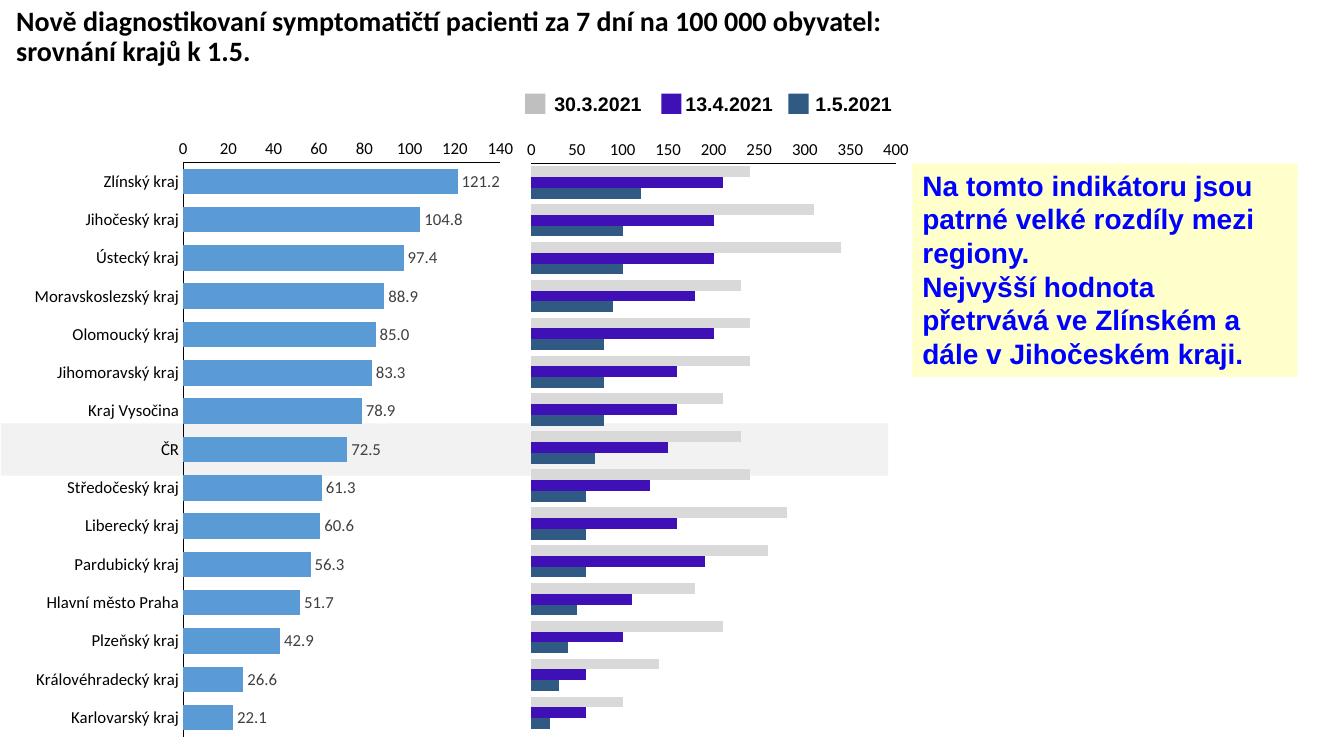
import dataclasses

import lxml.etree
import pptx
import pptx.chart.data
import pptx.dml.color
import pptx.enum.chart
import pptx.enum.shapes
import pptx.enum.text
import pptx.oxml.ns
import pptx.util

Inches = pptx.util.Inches
Pt = pptx.util.Pt


@dataclasses.dataclass(frozen=True)
class Theme:
    heading_font: str = "Calibri"
    text_font: str = "Arial"
    title_size: int = 20
    note_size: int = 20
    legend_size: int = 14
    chart_size: int = 12
    black: str = "000000"
    label: str = "404040"
    bar: str = "5B9BD5"
    march: str = "D9D9D9"
    march_key: str = "BFBFBF"
    april: str = "4010B7"
    may: str = "305983"
    band: str = "F2F2F2"
    note_fill: str = "FFFFCC"
    note_text: str = "0000FF"


@dataclasses.dataclass(frozen=True)
class Box:
    left: float
    top: float
    width: float
    height: float

    def lengths(self):
        return [Inches(value) for value in dataclasses.astuple(self)]


THEME = Theme()

REGIONS = [
    ("Zlínský kraj", 121.2, 240, 210, 120),
    ("Jihočeský kraj", 104.8, 310, 200, 100),
    ("Ústecký kraj", 97.4, 340, 200, 100),
    ("Moravskoslezský kraj", 88.9, 230, 180, 90),
    ("Olomoucký kraj", 85.0, 240, 200, 80),
    ("Jihomoravský kraj", 83.3, 240, 160, 80),
    ("Kraj Vysočina", 78.9, 210, 160, 80),
    ("ČR", 72.5, 230, 150, 70),
    ("Středočeský kraj", 61.3, 240, 130, 60),
    ("Liberecký kraj", 60.6, 280, 160, 60),
    ("Pardubický kraj", 56.3, 260, 190, 60),
    ("Hlavní město Praha", 51.7, 180, 110, 50),
    ("Plzeňský kraj", 42.9, 210, 100, 40),
    ("Královéhradecký kraj", 26.6, 140, 60, 30),
    ("Karlovarský kraj", 22.1, 100, 60, 20),
]
NAMES, CURRENT, MARCH, APRIL, MAY = zip(*REGIONS)


def rgb(color):
    return pptx.dml.color.RGBColor.from_string(color)


def set_font(font, name, size, color, bold=False):
    font.name = name
    font.size = Pt(size)
    font.bold = bold
    font.color.rgb = rgb(color)


def add_rectangle(slide, box, color):
    shape = slide.shapes.add_shape(pptx.enum.shapes.MSO_SHAPE.RECTANGLE, *box.lengths())
    shape.shadow.inherit = False
    shape.fill.solid()
    shape.fill.fore_color.rgb = rgb(color)
    shape.line.fill.background()


def add_title(slide, box):
    title = slide.shapes.title
    title.left, title.top, title.width, title.height = box.lengths()
    frame = title.text_frame
    frame.auto_size = pptx.enum.text.MSO_AUTO_SIZE.NONE
    frame.vertical_anchor = pptx.enum.text.MSO_ANCHOR.MIDDLE
    frame.text = (
        "Nově diagnostikovaní symptomatičtí pacienti za 7 dní na 100 000 obyvatel:"
        "\vsrovnání krajů k 1.5."
    )
    paragraph = frame.paragraphs[0]
    paragraph.alignment = pptx.enum.text.PP_ALIGN.LEFT
    paragraph.line_spacing = 0.9
    set_font(paragraph.font, THEME.heading_font, THEME.title_size, THEME.black, True)


def add_legend(slide, box):
    side = 0.2
    entries = [
        ("30.3.2021", THEME.march_key, 0, 0.19, 1.07),
        ("13.4.2021", THEME.april, 1.35, 1.49, 1.07),
        ("1.5.2021", THEME.may, 2.61, 2.78, 0.96),
    ]
    for date, color, key_offset, text_offset, width in entries:
        key_top = box.top + (box.height - side) / 2
        add_rectangle(slide, Box(box.left + key_offset, key_top, side, side), color)
        text_box = Box(box.left + text_offset, box.top, width, box.height)
        label = slide.shapes.add_textbox(*text_box.lengths())
        label.text_frame.word_wrap = False
        label.text_frame.text = date
        set_font(label.text_frame.paragraphs[0].font,
                 THEME.text_font, THEME.legend_size, THEME.black, True)


def place_plot(chart, x, y, width, height):
    plot_area = chart._chartSpace.chart.plotArea
    tag = pptx.oxml.ns.qn
    for old_layout in plot_area.findall(tag("c:layout")):
        plot_area.remove(old_layout)
    layout = lxml.etree.Element(tag("c:layout"))
    manual = lxml.etree.SubElement(layout, tag("c:manualLayout"))
    settings = [("layoutTarget", "inner"), ("xMode", "edge"), ("yMode", "edge"),
                ("x", x), ("y", y), ("w", width), ("h", height)]
    for name, value in settings:
        lxml.etree.SubElement(manual, tag("c:" + name)).set("val", str(value))
    plot_area.insert(0, layout)


def add_bar_chart(slide, box, categories, series, maximum, step, plot_box):
    data = pptx.chart.data.CategoryChartData()
    data.categories = categories
    for name, values, color in series:
        data.add_series(name, values)
    chart_type = pptx.enum.chart.XL_CHART_TYPE.BAR_CLUSTERED
    chart = slide.shapes.add_chart(chart_type, *box.lengths(), data).chart
    chart.has_title = False
    chart.has_legend = False
    set_font(chart.font, THEME.heading_font, THEME.chart_size, THEME.black)

    plot = chart.plots[0]
    plot.gap_width = 50
    plot.overlap = 0
    plot.vary_by_categories = False
    for bars, (name, values, color) in zip(plot.series, series):
        bars.format.fill.solid()
        bars.format.fill.fore_color.rgb = rgb(color)

    for axis in (chart.category_axis, chart.value_axis):
        axis.has_major_gridlines = False
        axis.major_tick_mark = pptx.enum.chart.XL_TICK_MARK.NONE
        axis.minor_tick_mark = pptx.enum.chart.XL_TICK_MARK.NONE
        axis.format.line.color.rgb = rgb(THEME.black)
        axis.format.line.width = Pt(0.75)
        set_font(axis.tick_labels.font, THEME.heading_font, THEME.chart_size, THEME.black)
    chart.category_axis.reverse_order = True
    chart.value_axis.minimum_scale = 0
    chart.value_axis.maximum_scale = maximum
    chart.value_axis.major_unit = step
    chart.value_axis.tick_labels.number_format = "#,##0"
    chart.value_axis.tick_labels.number_format_is_linked = False
    place_plot(chart, *plot_box)
    return chart


def add_history_chart(slide, box):
    series = [("30.3.2021", MARCH, THEME.march),
              ("13.4.2021", APRIL, THEME.april),
              ("1.5.2021", MAY, THEME.may)]
    numbers = [str(number) for number in range(1, len(REGIONS) + 1)]
    chart = add_bar_chart(slide, box, numbers, series, 400, 50, (0.054, 0.06, 0.884, 0.911))
    chart.category_axis.visible = False


def add_current_chart(slide, box):
    series = [("1.5.2021", CURRENT, THEME.bar)]
    chart = add_bar_chart(slide, box, NAMES, series, 140, 20, (0.317, 0.058, 0.637, 0.921))
    labels = chart.plots[0].series[0].data_labels
    labels.show_value = True
    labels.number_format = "#,##0.0"
    labels.number_format_is_linked = False
    labels.position = pptx.enum.chart.XL_LABEL_POSITION.OUTSIDE_END
    set_font(labels.font, THEME.heading_font, THEME.chart_size, THEME.label)


def add_note(slide, box):
    note = slide.shapes.add_textbox(*box.lengths())
    note.fill.solid()
    note.fill.fore_color.rgb = rgb(THEME.note_fill)
    frame = note.text_frame
    frame.word_wrap = True
    frame.auto_size = pptx.enum.text.MSO_AUTO_SIZE.SHAPE_TO_FIT_TEXT
    frame.text = (
        "Na tomto indikátoru jsou patrné velké rozdíly mezi regiony.\n"
        "Nejvyšší hodnota přetrvává ve Zlínském a dále v Jihočeském kraji."
    )
    for paragraph in frame.paragraphs:
        set_font(paragraph.font, THEME.text_font, THEME.note_size, THEME.note_text, True)


def main():
    presentation = pptx.Presentation()
    presentation.slide_width = Inches(13.33)
    presentation.slide_height = Inches(7.5)
    slide = presentation.slides.add_slide(presentation.slide_layouts.get_by_name("Title Only"))
    add_title(slide, Box(0.06, 0, 13.06, 0.74))
    add_legend(slide, Box(5.21, 0.86, 3.74, 0.34))
    add_rectangle(slide, Box(0.01, 4.2, 8.8, 0.52), THEME.band)
    add_history_chart(slide, Box(5.05, 1.25, 4.09, 6.19))
    add_current_chart(slide, Box(0.25, 1.25, 4.94, 6.19))
    add_note(slide, Box(9.05, 1.62, 3.82, 2.12))
    presentation.save("out.pptx")


if __name__ == "__main__":
    main()
